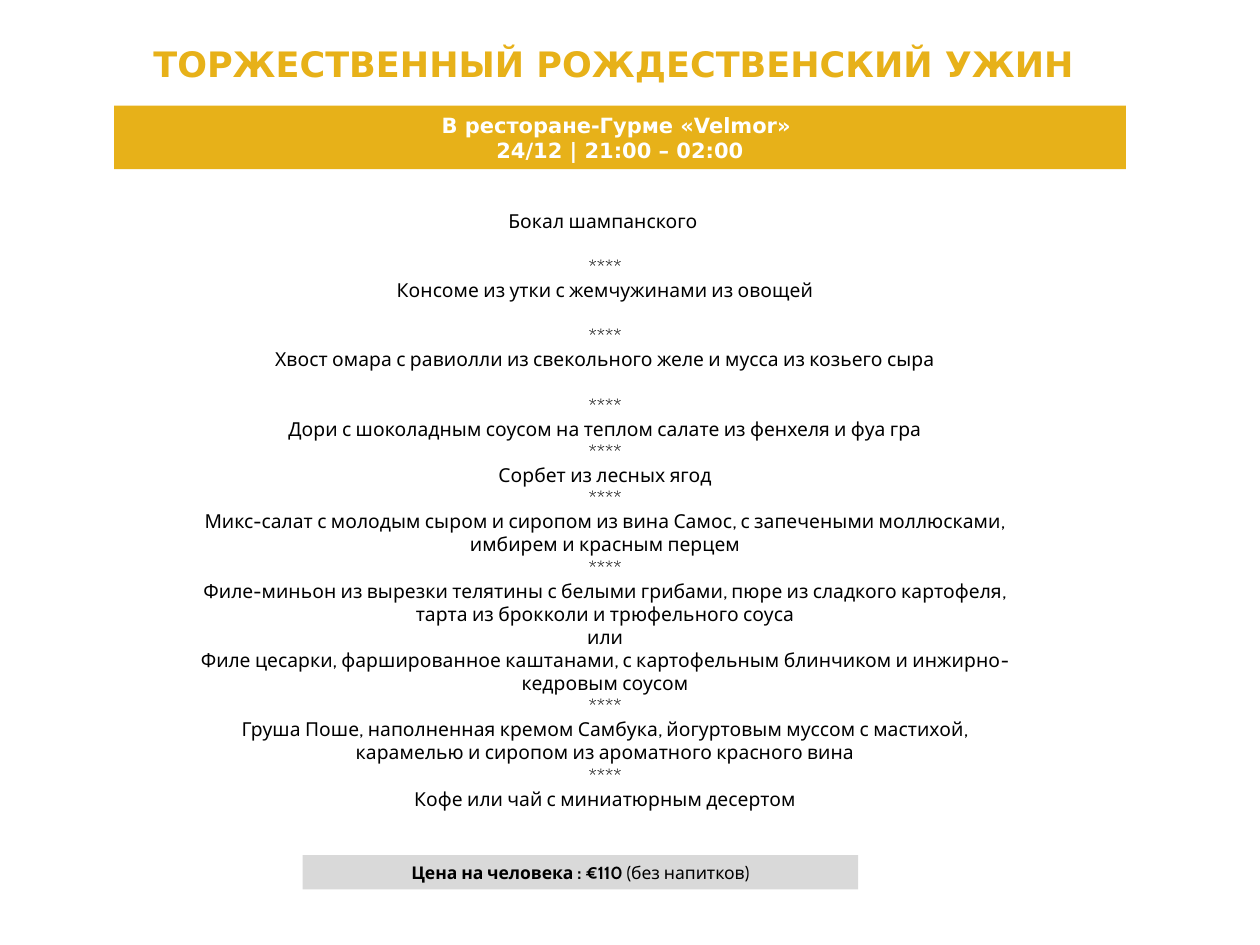
from dataclasses import dataclass

import pptx
import pptx.dml.color
import pptx.enum.shapes
import pptx.enum.text
import pptx.util
from pptx.util import Cm


@dataclass(frozen=True)
class Theme:
    gold: str = "E7B119"
    grey: str = "D9D9D9"
    white: str = "FFFFFF"
    black: str = "000000"
    heading_font: str = "DejaVu Sans"
    body_font: str = "Cabin"
    title_size: float = 20
    banner_size: float = 12
    menu_size: float = 11
    price_size: float = 10
    course_gap: float = 13.2


THEME = Theme()
SEPARATOR = "****"
SPACED_COURSES = [
    "Бокал шампанского ",
    "Консоме из утки с жемчужинами из овощей",
    "Хвост омара с равиолли из свекольного желе и мусса из козьего сыра",
]
CLOSE_COURSES = [
    ["Дори с шоколадным соусом на теплом салате из фенхеля и фуа гра"],
    ["Сорбет из лесных ягод"],
    ["Микс-салат с молодым сыром и сиропом из вина Самос, с запечеными моллюсками, "
     "имбирем и красным перцем"],
    ["Филе-миньон из вырезки телятины с белыми грибами, пюре из сладкого картофеля, "
     "тарта из брокколи и трюфельного соуса",
     "или",
     "Филе цесарки, фаршированное каштанами, с картофельным блинчиком и "
     "инжирно-кедровым соусом"],
    ["Груша Поше, наполненная кремом Самбука, йогуртовым муссом с мастихой, "
     "карамелью и сиропом из ароматного красного вина"],
    ["Кофе или чай с миниатюрным десертом"],
]


def color(value):
    return pptx.dml.color.RGBColor.from_string(value)


def add_text_area(slide, box, fill=None):
    if fill is None:
        shape = slide.shapes.add_textbox(*box)
    else:
        shape = slide.shapes.add_shape(pptx.enum.shapes.MSO_SHAPE.RECTANGLE, *box)
        shape.shadow.inherit = False
        shape.fill.solid()
        shape.fill.fore_color.rgb = color(fill)
        shape.line.fill.background()
        shape.text_frame.vertical_anchor = pptx.enum.text.MSO_ANCHOR.MIDDLE
    shape.text_frame.word_wrap = True
    return shape.text_frame


def write_lines(frame, lines, font_name, size, font_color, bold=None):
    frame.text = "\n".join(lines)
    for paragraph in frame.paragraphs:
        paragraph.alignment = pptx.enum.text.PP_ALIGN.CENTER
        paragraph.font.name = font_name
        paragraph.font.size = pptx.util.Pt(size)
        paragraph.font.color.rgb = color(font_color)
        paragraph.font.bold = bold


def add_title(slide, box):
    frame = add_text_area(slide, box)
    write_lines(frame, ["ТОРЖЕСТВЕННЫЙ РОЖДЕСТВЕНСКИЙ УЖИН "],
                THEME.heading_font, THEME.title_size, THEME.gold, bold=True)


def add_banner(slide, box):
    frame = add_text_area(slide, box, THEME.gold)
    write_lines(frame, ["В ресторане-Гурме «Velmor» ", "24/12 | 21:00 – 02:00"],
                THEME.heading_font, THEME.banner_size, THEME.white, bold=True)


def add_menu(slide, box):
    lines = []
    for course in [[name] for name in SPACED_COURSES] + CLOSE_COURSES:
        if lines:
            lines.append(SEPARATOR)
        lines.extend(course)
    frame = add_text_area(slide, box)
    write_lines(frame, lines, THEME.body_font, THEME.menu_size, THEME.black)
    for paragraph in frame.paragraphs:
        if paragraph.text in SPACED_COURSES:
            paragraph.space_after = pptx.util.Pt(THEME.course_gap)


def add_price(slide, box):
    frame = add_text_area(slide, box, THEME.grey)
    write_lines(frame, ["Цена на человека : €110 "],
                THEME.body_font, THEME.price_size, THEME.black)
    paragraph = frame.paragraphs[0]
    paragraph.runs[0].font.bold = True
    paragraph.add_run().text = "(без напитков)"


def main():
    presentation = pptx.Presentation()
    presentation.slide_width = Cm(25.4)
    presentation.slide_height = Cm(19.05)
    slide = presentation.slides.add_slide(presentation.slide_layouts[6])
    add_title(slide, (Cm(1.7), Cm(0.74), Cm(21.59), Cm(1.12)))
    add_banner(slide, (Cm(2.3), Cm(2.13), Cm(20.4), Cm(1.28)))
    add_menu(slide, (Cm(3.7), Cm(4.09), Cm(17), Cm(12.47)))
    add_price(slide, (Cm(6.1), Cm(17.24), Cm(11.2), Cm(0.69)))
    presentation.save("out.pptx")


if __name__ == "__main__":
    main()
